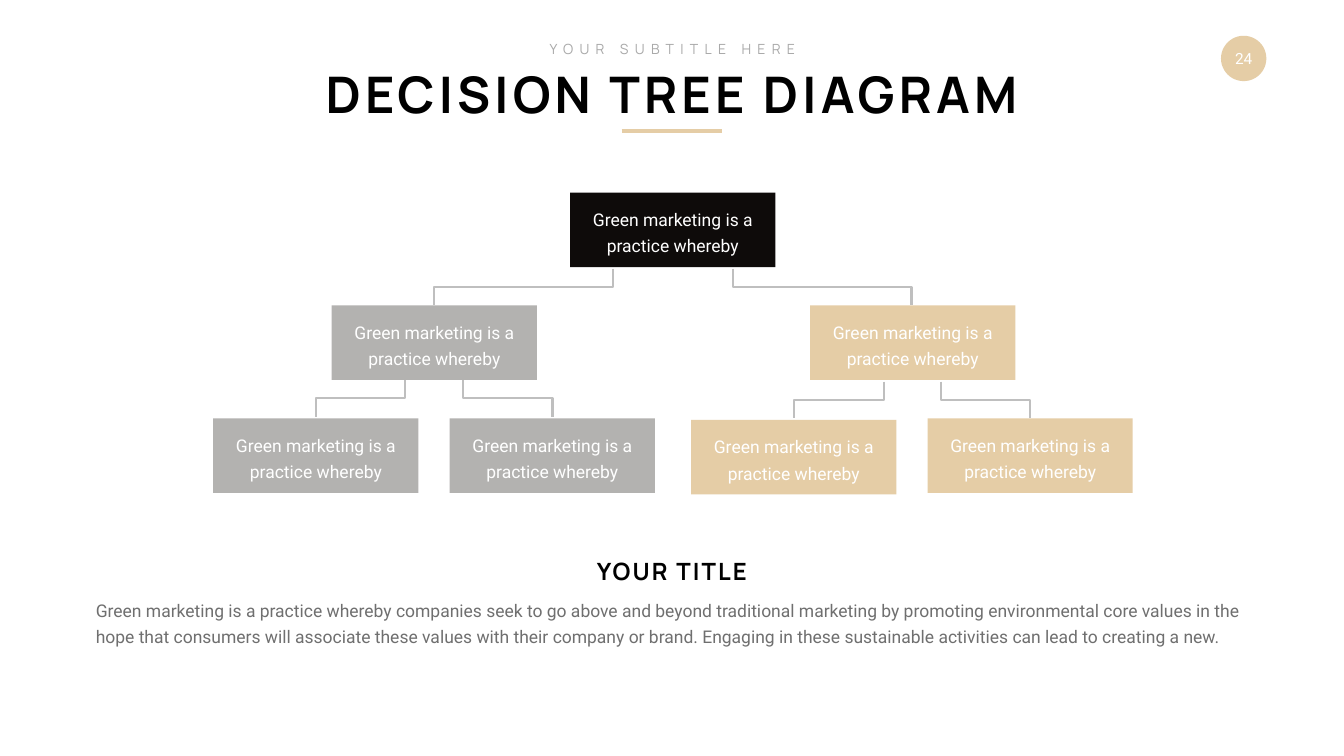
"""Build the decision tree diagram slide."""
from pptx import Presentation
from pptx.dml.color import RGBColor
from pptx.enum.shapes import MSO_CONNECTOR, MSO_SHAPE
from pptx.enum.text import MSO_ANCHOR, PP_ALIGN
from pptx.util import Pt
from lxml.etree import SubElement
from pptx.oxml.ns import qn

PX = 9144
BLACK = RGBColor(0x00, 0x00, 0x00)
INK = RGBColor(0x0E, 0x0B, 0x0A)
GRAY = RGBColor(0xB3, 0xB2, 0xB0)
SAND = RGBColor(0xE5, 0xCD, 0xA6)
WHITE = RGBColor(0xFF, 0xFF, 0xFF)
LINE = RGBColor(0xBF, 0xBF, 0xBF)
SUBTITLE = RGBColor(0xA9, 0xA9, 0xA9)
BODY = RGBColor(0x6F, 0x6F, 0x6F)

BOX_W, BOX_H = 407, 148
BOX_TEXT = "Green marketing is a practice whereby"
BOXES = [
    (1131, 382, INK),
    (658, 606, GRAY),
    (1607, 606, SAND),
    (423, 830, GRAY),
    (892, 830, GRAY),
    (1371, 833, SAND),
    (1840, 830, SAND),
]
BRANCHES = [
    (1216, 533, 861),
    (1454, 533, 1808),
    (803, 754, 626),
    (919, 754, 1096),
    (1753, 757, 1575),
    (1867, 757, 2044),
]
BRANCH_H = 73


def set_text(sp, text, font, size, color, align=PP_ALIGN.CENTER, bold=False,
             spacing=0, wrap=True, anchor=MSO_ANCHOR.TOP, inset=(10, 5)):
    tf = sp.text_frame
    tf.text = text
    tf.word_wrap = wrap
    tf.vertical_anchor = anchor
    tf.margin_left = tf.margin_right = inset[0] * PX
    tf.margin_top = tf.margin_bottom = inset[1] * PX
    p = tf.paragraphs[0]
    p.alignment = align
    p.font.name = font
    p.font.size = Pt(size)
    p.font.bold = bold
    p.font.color.rgb = color
    if spacing:
        p.runs[0].font._element.set("spc", str(spacing * 100))
    return p


def add_filled(shape, x, y, w, h, color):
    sp = slide.shapes.add_shape(shape, x * PX, y * PX, w * PX, h * PX)
    sp.shadow.inherit = False
    sp.fill.solid()
    sp.fill.fore_color.rgb = color
    sp.line.fill.background()
    return sp


prs = Presentation()
prs.slide_width = 2666 * PX
prs.slide_height = 1500 * PX
slide = prs.slides.add_slide(prs.slide_layouts[5])

title = slide.shapes.title
title.left, title.top, title.width, title.height = 615 * PX, 120 * PX, 1436 * PX, 131 * PX
set_text(title, "DECISION TREE DIAGRAM", "Manrope", 72, BLACK, bold=True, spacing=6, wrap=False)

subtitle = slide.shapes.add_textbox(1061 * PX, 76 * PX, 545 * PX, 44 * PX)
p = set_text(subtitle, "YOUR SUBTITLE HERE", "Manrope", 20, SUBTITLE, spacing=9, wrap=False)
p.space_before = Pt(4)

rule = slide.shapes.add_connector(MSO_CONNECTOR.STRAIGHT, 1233 * PX, 260 * PX, 1432 * PX, 260 * PX)
rule.line.color.rgb = SAND
rule.line.width = Pt(5)
SubElement(rule._element.spPr, qn("a:effectLst"))

badge = add_filled(MSO_SHAPE.OVAL, 2422, 71, 90, 90, SAND)
set_text(badge, "24", "Roboto", 22, WHITE, wrap=False, anchor=MSO_ANCHOR.MIDDLE, inset=(0, 0))

for x, y, end_x in BRANCHES:
    mid_y = y + BRANCH_H // 2
    builder = slide.shapes.build_freeform(x, y, scale=PX)
    builder.add_line_segments([(x, mid_y), (end_x, mid_y), (end_x, y + BRANCH_H)], close=False)
    sp = builder.convert_to_shape()
    sp.shadow.inherit = False
    sp.fill.background()
    sp.line.color.rgb = LINE
    sp.line.width = Pt(3)

for x, y, color in BOXES:
    sp = add_filled(MSO_SHAPE.RECTANGLE, x, y, BOX_W, BOX_H, color)
    p = set_text(sp, BOX_TEXT, "Roboto", 25, WHITE, anchor=MSO_ANCHOR.MIDDLE, inset=(31, 5))
    p.line_spacing = Pt(38)
    p.space_before = Pt(5)

heading = slide.shapes.add_textbox(1164 * PX, 1100 * PX, 338 * PX, 67 * PX)
set_text(heading, "YOUR TITLE", "Manrope", 34, BLACK, bold=True, spacing=3, wrap=False)

body = slide.shapes.add_textbox(166 * PX, 1167 * PX, 2333 * PX, 128 * PX)
p = set_text(
    body,
    "Green marketing is a practice whereby companies seek to go above and beyond traditional "
    "marketing by promoting environmental core values in the hope that consumers will associate "
    "these values with their company or brand. Engaging in these sustainable activities can lead "
    "to creating a new.",
    "Roboto", 25, BODY, align=PP_ALIGN.LEFT, inset=(24, 12))
p.line_spacing = Pt(38)
p.space_before = Pt(5)

prs.save("out.pptx")
